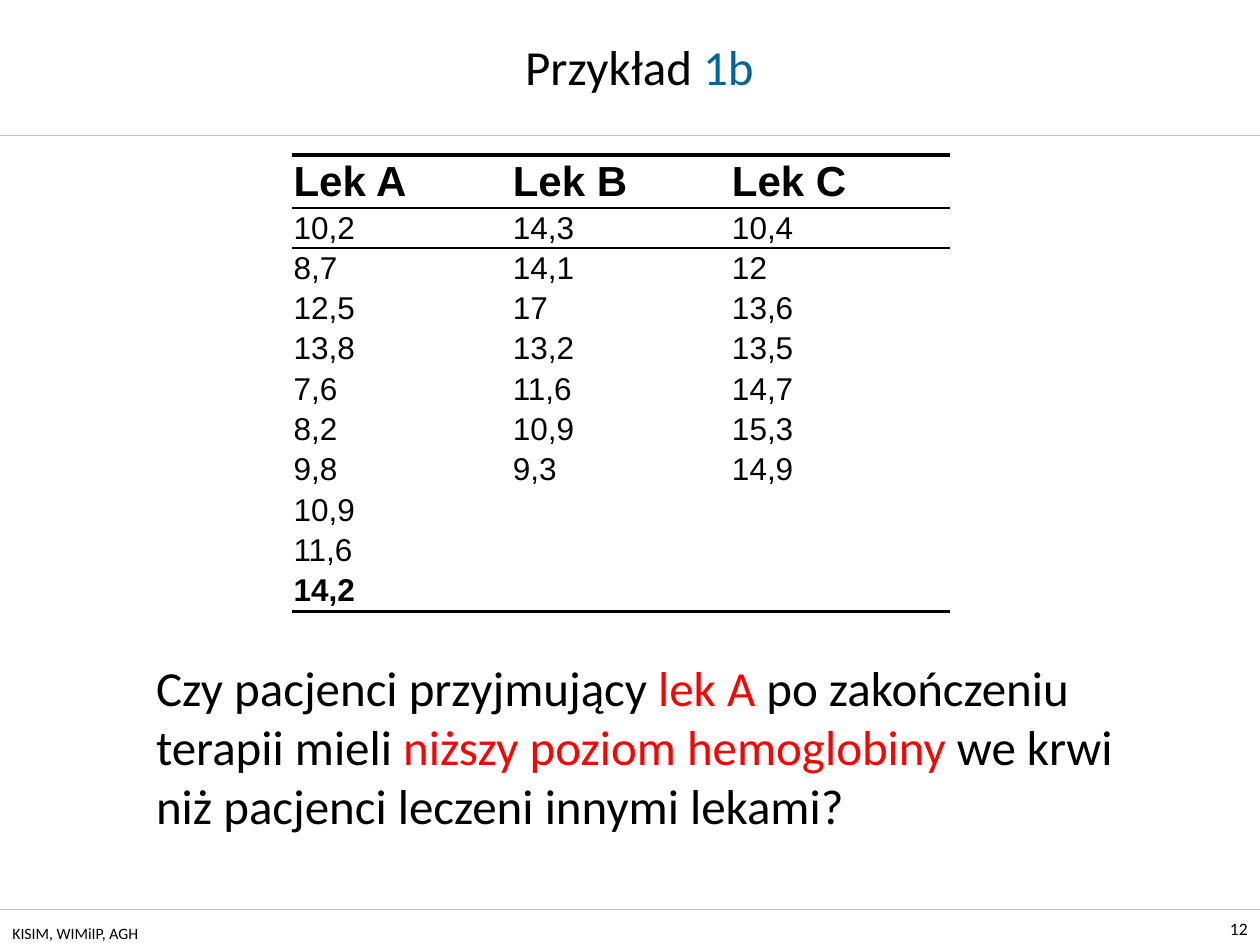
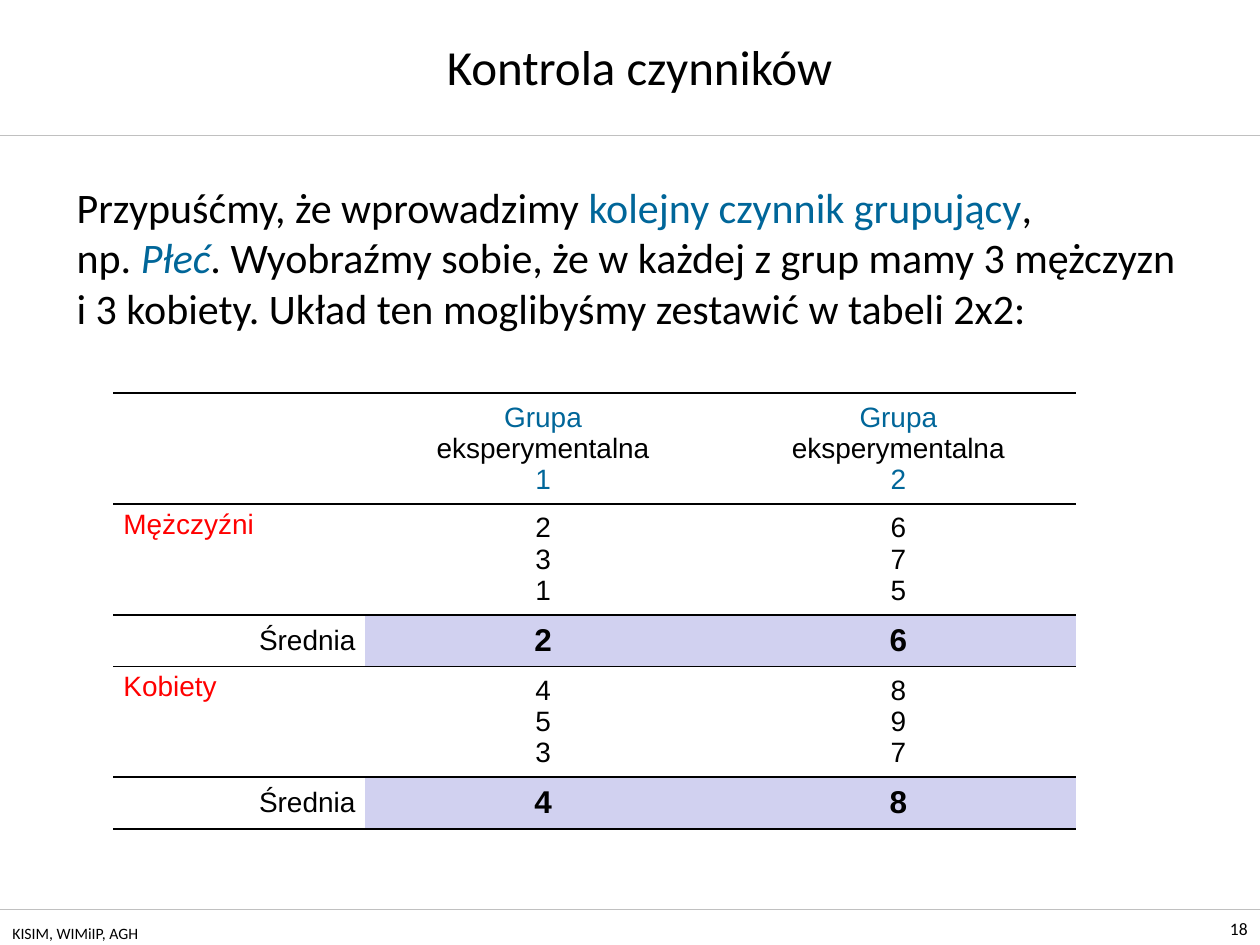
import pptx
import pptx.util
import pptx.dml.color
import pptx.enum.shapes
import pptx.enum.text
import pptx.oxml.ns
from lxml import etree

Inches, Pt = pptx.util.Inches, pptx.util.Pt
ALIGN = pptx.enum.text.PP_ALIGN
ANCHOR = pptx.enum.text.MSO_ANCHOR
qn = pptx.oxml.ns.qn
COLORS = {"text": "000000", "accent": "006699", "alert": "FF0000",
          "rule": "C0C0C0", "mean": "D1D1F0", "paper": "FFFFFF"}
NO_STYLE = "{2D5ABB26-0587-4C30-8999-92F81FD0307C}"
ACCENT, ALERT = {"color": "accent"}, {"color": "alert"}


def rgb(name):
    return pptx.dml.color.RGBColor.from_string(COLORS[name])


class Deck:
    def __init__(self):
        self.prs = pptx.Presentation()
        self.prs.slide_width, self.prs.slide_height = Inches(10), Inches(7.5)
        self.s = None

    def slide(self, number, title):
        self.s = self.prs.slides.add_slide(self.prs.slide_layouts[6])
        for y in (1.07, 7.22):
            self.rule(y)
        self.text(9.49, 7.22, 0.51, 0.28, [(str(number), {})], 10,
                  ALIGN.RIGHT, ANCHOR.BOTTOM)
        self.text(0.98, 0.21, 8.19, 0.63, title, 28, ALIGN.CENTER, ANCHOR.MIDDLE)
        self.text(0, 7.28, 3.17, 0.22, [("KISIM, WIMiIP, AGH", {})], 9)

    def rule(self, y):
        sp = self.s.shapes.add_connector(pptx.enum.shapes.MSO_CONNECTOR.STRAIGHT,
                                         0, Inches(y), Inches(10), Inches(y))
        sp.line.color.rgb = rgb("rule")
        sp.line.width = Pt(0.25)
        etree.SubElement(sp._element.spPr, qn("a:effectLst"))

    def text(self, x, y, w, h, runs, size, align=ALIGN.LEFT, anchor=ANCHOR.TOP):
        tf = self.s.shapes.add_textbox(*map(Inches, (x, y, w, h))).text_frame
        tf.word_wrap = True
        tf.vertical_anchor = anchor
        self.runs(tf.paragraphs[0], runs, align, {"name": "Calibri", "size": size})

    def runs(self, p, runs, align, base):
        p.alignment = align
        for text, fmt in runs:
            style = {"color": "text", **base, **fmt}
            color, size = style.pop("color"), style.pop("size")
            for i, line in enumerate(text.split("\n")):
                if i:
                    self.line_break(p, size, style["name"])
                if not line:
                    continue
                r = p.add_run()
                r.text = line
                r.font.size = Pt(size)
                r.font.color.rgb = rgb(color)
                for key, value in style.items():
                    setattr(r.font, key, value)

    def line_break(self, p, size, name):
        p.add_line_break()
        props = etree.SubElement(p._p[-1], qn("a:rPr"), sz=str(size * 100))
        etree.SubElement(props, qn("a:latin"), typeface=name)

    def table(self, x, y, widths, heights, rules, inset):
        shape = self.s.shapes.add_table(len(heights), len(widths), *map(
            Inches, (x, y, sum(widths), sum(heights))))
        table = shape.table
        table.first_row = table.horz_banding = False
        table._tbl.tblPr[0].text = NO_STYLE
        for col, w in zip(table.columns, widths):
            col.width = Inches(w)
        for i, (row, h) in enumerate(zip(table.rows, heights)):
            row.height = Inches(h)
            for cell in row.cells:
                margins = dict(zip(("left", "top", "right", "bottom"), inset * 2))
                for side, value in margins.items():
                    setattr(cell, f"margin_{side}", Inches(value))
                self.border(cell, "a:lnT", rules[i])
                self.border(cell, "a:lnB", rules[i + 1])
        return table

    def border(self, cell, tag, width):
        if not width:
            return
        ln = etree.SubElement(cell._tc.get_or_add_tcPr(), qn(tag), w=str(Pt(width)))
        fill = etree.SubElement(ln, qn("a:solidFill"))
        etree.SubElement(fill, qn("a:srgbClr"), val=COLORS["text"])

    def cell(self, cell, runs, size, align, fill=None, anchor=ANCHOR.MIDDLE):
        cell.vertical_anchor = anchor
        if fill:
            cell.fill.solid()
            cell.fill.fore_color.rgb = rgb(fill)
        else:
            cell.fill.background()
        p = cell.text_frame.paragraphs[0]
        self.runs(p, runs, align, {"name": "Arial", "size": size})
        if not runs:
            p._p.get_or_add_endParaRPr().set("sz", str(size * 100))


def drug_slide(deck):
    deck.slide(12, [("Przykład ", {}), ("1b", ACCENT)])
    drugs = {
        "Lek A": "10,2 8,7 12,5 13,8 7,6 8,2 9,8 10,9 11,6 14,2",
        "Lek B": "14,3 14,1 17 13,2 11,6 10,9 9,3",
        "Lek C": "10,4 12 13,6 13,5 14,7 15,3 14,9",
    }
    table = deck.table(2.32, 1.23, [1.74] * 3, [0.1] * 11,
                       [2, 1] + [0] * 9 + [2], (0.01, 0.01))
    for c, (drug, values) in enumerate(drugs.items()):
        deck.cell(table.cell(0, c), [(drug, {"bold": True})], 24,
                  ALIGN.JUSTIFY, "paper")
        values = values.split()
        for i in range(10):
            runs = [(values[i], {"bold": i == 9})] if i < len(values) else []
            deck.cell(table.cell(i + 1, c), runs, 18 if runs else 12,
                      ALIGN.JUSTIFY, "paper")
    deck.text(1.14, 5.17, 7.87, 1.51, [
        ("Czy pacjenci przyjmujący ", {}), ("lek A", ALERT),
        (" po zakończeniu terapii mieli ", {}),
        ("niższy poziom hemoglobiny ", ALERT),
        ("we krwi niż pacjenci leczeni innymi lekami?", {})], 28)


def factor_slide(deck):
    deck.slide(18, [("Kontrola czynników", {})])
    deck.text(0.51, 1.39, 9, 1.6, [
        ("Przypuśćmy, że wprowadzimy ", {}), ("kolejny czynnik grupujący", ACCENT),
        (",\nnp. ", {}), ("Płeć", {**ACCENT, "italic": True}),
        (". Wyobraźmy sobie, że w każdej z grup mamy 3 mężczyzn i 3 kobiety. "
         "Układ ten moglibyśmy zestawić w tabeli 2x2:", {})], 24)
    table = deck.table(0.9, 3.12, [2, 2.82, 2.82], [0.76] + [0.76, 0.41] * 2,
                       [1] * 6, (0.08, 0.04))
    deck.cell(table.cell(0, 0), [], 16, ALIGN.LEFT)
    for c in (1, 2):
        deck.cell(table.cell(0, c), [("Grupa\n", ACCENT), ("eksperymentalna\n", {}),
                                     (str(c), ACCENT)], 16, ALIGN.CENTER)
    sexes = [("Mężczyźni", ((2, 3, 1), (6, 7, 5))),
             ("Kobiety", ((4, 5, 3), (8, 9, 7)))]
    for i, (sex, groups) in enumerate(sexes):
        row = 1 + 2 * i
        deck.cell(table.cell(row, 0), [(sex, ALERT)], 16, ALIGN.LEFT,
                  anchor=ANCHOR.TOP)
        deck.cell(table.cell(row + 1, 0), [("Średnia", {})], 16, ALIGN.RIGHT)
        for c, scores in enumerate(groups, 1):
            deck.cell(table.cell(row, c), [("\n".join(map(str, scores)), {})],
                      16, ALIGN.CENTER)
            mean = sum(scores) // len(scores)
            deck.cell(table.cell(row + 1, c), [(str(mean), {"bold": True})],
                      18, ALIGN.CENTER, "mean")


def main():
    deck = Deck()
    drug_slide(deck)
    factor_slide(deck)
    deck.prs.save("out.pptx")


if __name__ == "__main__":
    main()
